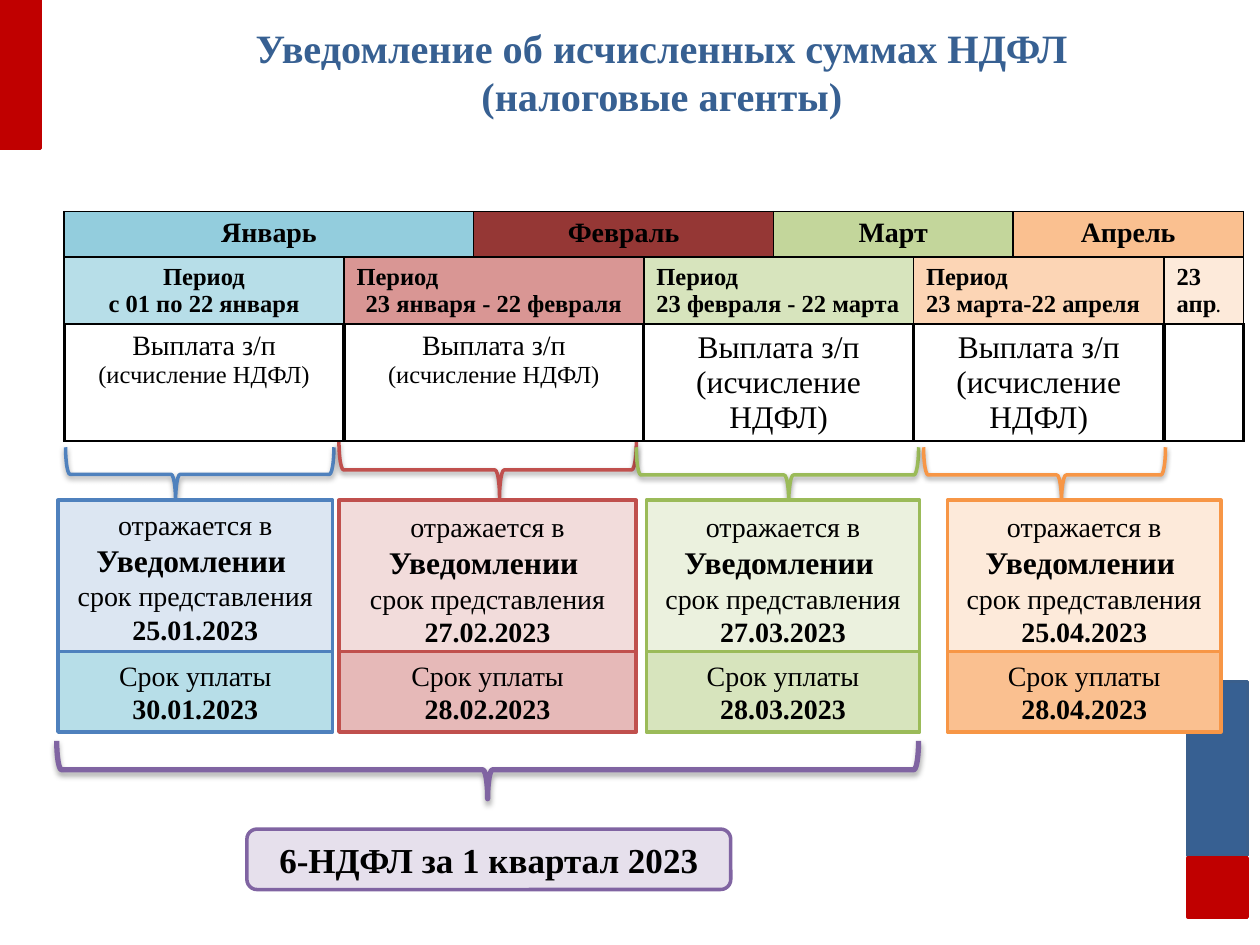
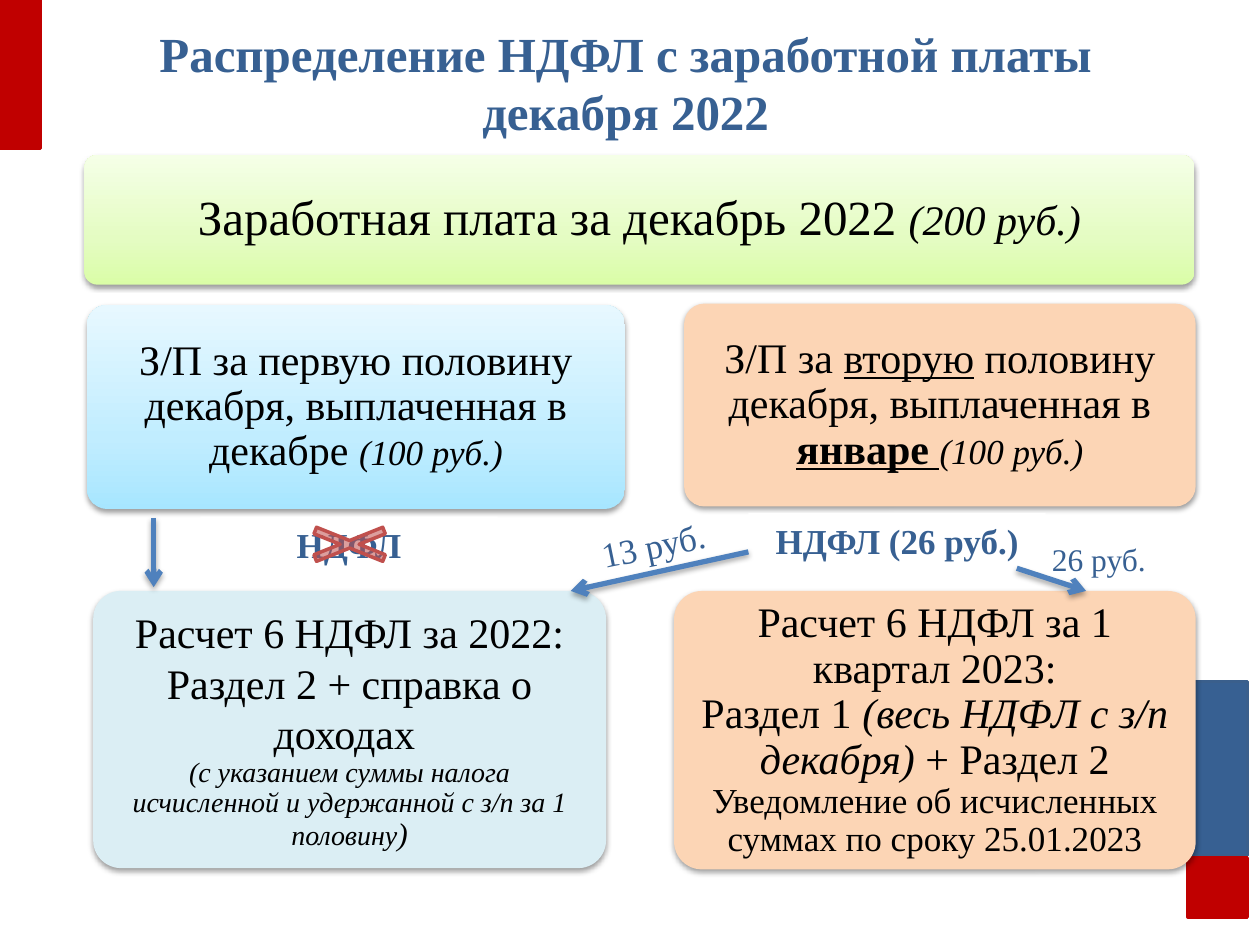
from copy import deepcopy
from dataclasses import dataclass, field

from lxml.etree import SubElement
from pptx import Presentation
from pptx.dml.color import RGBColor
from pptx.enum.shapes import MSO_CONNECTOR as Link, MSO_SHAPE as Preset
from pptx.enum.text import MSO_ANCHOR as Anchor, MSO_AUTO_SIZE as AutoSize, PP_ALIGN as Align
from pptx.oxml.ns import qn
from pptx.util import Emu, Pt

EMU_PER_PX = 9144  # 100 px to the inch
TITLE_ONLY = 5


@dataclass(frozen=True)
class Theme:
    font: str = "Times New Roman"
    ink: str = "000000"
    paper: str = "FFFFFF"
    navy: str = "376092"
    navy_edge: str = "3A5F8C"
    red: str = "C00000"
    blue: str = "4F81BD"
    brick: str = "C0504D"
    green: str = "9BBB59"
    orange: str = "F79646"
    purple: str = "8064A2"
    lilac: str = "E6E0EC"
    peach: str = "FCD5B5"
    ice: str = "DBEEF4"
    lime_fade: tuple = ("DAFDA7", "E4FCC2", "F5FFE7")
    sky_fade: tuple = ("A7E6FF", "C1EDFF", "E7F8FF")
    months: tuple = ("93CDDD", "953735", "C3D69B", "FAC090")
    periods: tuple = ("B7DEE8", "D99694", "D7E4BD", "FCD5B5", "FDEADA")
    dot: int = 9
    small: int = 14
    body: int = 16
    large: int = 18
    label: int = 20
    title: int = 23
    head: int = 24
    banner: int = 28
    soft: tuple = (1.57, 38)    # shadow distance in points, opacity in percent
    strong: tuple = (1.81, 35)


THEME = Theme()


@dataclass
class Span:
    text: str
    size: int = THEME.body
    bold: bool = False
    italic: bool = False
    underline: bool = False
    color: str = THEME.ink


@dataclass
class Para:
    spans: list = field(default_factory=list)
    align: Align = Align.CENTER
    spacing: float = 1.0


def line_of(text, size, align=Align.CENTER, **style):
    """A paragraph with a single span."""
    return Para([Span(text, size, **style)], align)


def px(*lengths):
    return [Emu(length * EMU_PER_PX) for length in lengths]


def rgb(color):
    return RGBColor.from_string(color)


def write(frame, paras):
    frame.word_wrap = True
    for index, item in enumerate(paras):
        para = frame.paragraphs[0] if index == 0 else frame.add_paragraph()
        para.alignment = item.align
        para.line_spacing = item.spacing
        for span in item.spans:
            for number, text in enumerate(span.text.split("\n")):
                if number:
                    para.add_line_break()
                run = para.add_run()
                run.text = text
                font = run.font
                font.name, font.size = THEME.font, Pt(span.size)
                font.bold, font.italic, font.underline = span.bold, span.italic, span.underline
                font.color.rgb = rgb(span.color)


def set_shadow(shape, shadow):
    """Call after fill and line; None leaves an empty effect list."""
    effects = SubElement(shape._element.spPr, qn("a:effectLst"))
    if shadow:
        distance, opacity = shadow
        outer = SubElement(effects, qn("a:outerShdw"), blurRad="40000", dist=str(Pt(distance)),
                           dir="5400000", rotWithShape="0")
        tint = SubElement(outer, qn("a:srgbClr"), val=THEME.ink)
        SubElement(tint, qn("a:alpha"), val=str(opacity * 1000))


def set_fade(shape, colors):
    """Three-colour gradient running upwards."""
    fill = shape.fill
    fill.gradient()
    fill.gradient_angle = 90
    first = shape._element.spPr.find(".//" + qn("a:gs"))
    first.addnext(deepcopy(first))
    for stop, color, position in zip(fill.gradient_stops, colors, (0, 0.35, 1)):
        stop.color.rgb = rgb(color)
        stop.position = position


def add_box(page, preset, place, fill=None, line=None, weight=2, paras=(), adjust=(),
            shadow=None, inset=None, opacity=None):
    shape = page.shapes.add_shape(preset, *px(*place))
    for index, value in enumerate(adjust):
        shape.adjustments[index] = value
    if isinstance(fill, tuple):
        set_fade(shape, fill)
    elif fill:
        shape.fill.solid()
        shape.fill.fore_color.rgb = rgb(fill)
    else:
        shape.fill.background()
    if opacity:
        tint = shape._element.spPr.find(qn("a:solidFill"))[0]
        SubElement(tint, qn("a:alpha"), val=str(opacity * 1000))
    if line:
        shape.line.color.rgb = rgb(line)
        shape.line.width = Pt(weight)
    else:
        shape.line.fill.background()
    set_shadow(shape, shadow)
    frame = shape.text_frame
    if inset is not None:
        set_inset(frame, inset)
    write(frame, paras)
    return shape


def set_inset(frame, inset):
    frame.margin_left = frame.margin_top = frame.margin_right = frame.margin_bottom = px(inset)[0]


def add_brace(page, left, top, width, height, color, tip=0.5, weight=2, shadow=THEME.soft):
    """Downward brace filling the given box; tip is measured from its right end."""
    turn = (width - height) // 2
    brace = add_box(page, Preset.RIGHT_BRACE, (left + turn, top - turn, height, width),
                    line=color, weight=weight, adjust=(0.083, tip), shadow=shadow)
    brace.rotation = 90


def add_arrow(page, *ends):
    arrow = page.shapes.add_connector(Link.STRAIGHT, *px(*ends))
    arrow.line.color.rgb = rgb(THEME.blue)
    arrow.line.width = Pt(3)
    SubElement(arrow._element.spPr.find(qn("a:ln")), qn("a:tailEnd"), type="arrow")
    set_shadow(arrow, THEME.strong)


def add_note(page, place, text, size, rotation=0):
    note = page.shapes.add_textbox(*px(*place))
    note.rotation = rotation
    write(note.text_frame, [line_of(text, size, Align.LEFT, color=THEME.navy)])


def add_page(deck, title, place, size):
    """Page with the shared corner bands and title style."""
    page = deck.slides.add_slide(deck.slide_layouts[TITLE_ONLY])
    for band, fill, edge in (((943, 541, 47, 138), THEME.navy, THEME.navy_edge),
                             ((943, 681, 47, 47), THEME.red, THEME.red),
                             ((0, 0, 32, 118), THEME.red, THEME.red)):
        add_box(page, Preset.RECTANGLE, band, fill, edge)
    holder = page.shapes.title
    holder.left, holder.top, holder.width, holder.height = px(*place)
    frame = holder.text_frame
    frame.auto_size = AutoSize.NONE
    frame.vertical_anchor = Anchor.MIDDLE
    set_inset(frame, 0)
    write(frame, [line_of(title, size, bold=True, color=THEME.navy)])
    return page


def set_borders(cell, side_weight):
    props = cell._tc.get_or_add_tcPr()
    for side, weight in (("L", side_weight), ("R", side_weight), ("T", 1), ("B", 1)):
        edge = SubElement(props, qn("a:ln" + side), w=str(Pt(weight)))
        SubElement(SubElement(edge, qn("a:solidFill")), qn("a:srgbClr"), val=THEME.ink)


def fill_row(table, row, starts, fills, texts):
    """Merge each cell up to the next start, then fill and write it."""
    ends = starts[1:] + [len(table.columns)]
    for start, end, fill, paras in zip(starts, ends, fills, texts):
        cell = table.cell(row, start)
        if end - start > 1:
            cell.merge(table.cell(row, end - 1))
        cell.fill.solid()
        cell.fill.fore_color.rgb = rgb(fill)
        write(cell.text_frame, paras)


def add_calendar(page):
    widths, heights = (222, 103, 135, 103, 111, 79, 120, 63), (36, 53, 93)
    table = page.shapes.add_table(len(heights), len(widths),
                                  *px(51, 168, sum(widths), sum(heights))).table
    table.first_row = table.horz_banding = False
    for column, width in zip(table.columns, px(*widths)):
        column.width = width
    for index, height in enumerate(px(*heights)):
        table.rows[index].height = height
        for cell in table.rows[index].cells:
            set_borders(cell, 2.25 if index == 2 else 1)

    months = [[line_of(name, THEME.body, bold=True)]
              for name in ("Январь", "Февраль", "Март", "Апрель")]
    fill_row(table, 0, [0, 2, 4, 6], THEME.months, months)

    def period(dates, first=Align.LEFT, second=Align.LEFT):
        return [line_of("Период", THEME.small, first, bold=True),
                line_of(dates, THEME.small, second, bold=True)]

    def payment(size, detail_size):
        return [line_of("Выплата з/п", size), line_of("(исчисление НДФЛ)", detail_size)]

    starts = [0, 1, 3, 5, 7]
    fill_row(table, 1, starts, THEME.periods, [
        period("с 01 по 22 января", Align.CENTER, Align.CENTER),
        period("23 января - 22 февраля", second=Align.CENTER),
        period("23 февраля - 22 марта"),
        period("23 марта-22 апреля"),
        [Para([Span("23 апр", THEME.small, bold=True), Span(".", THEME.dot, bold=True)],
              Align.LEFT)]])
    compact, wide = payment(THEME.body, THEME.small), payment(THEME.large, THEME.large)
    fill_row(table, 2, starts, [THEME.paper] * 5, [compact, compact, wide, wide, []])


def add_deadline(page, left, width, height, color, fills, notice, payment):
    """Notice card with its payment card below."""
    add_box(page, Preset.RECTANGLE, (left, 397, width, height), fills[0], color, paras=[
        Para([Span("отражается в "), Span("Уведомлении ", THEME.large, bold=True)]),
        Para([Span("срок представления "), Span(notice, bold=True)])])
    add_box(page, Preset.RECTANGLE, (left, 517, width, 64), fills[1], color, paras=[
        Para([Span("Срок уплаты "), Span(payment, bold=True)])])


def build_notice_page(deck):
    page = add_page(deck, "Уведомление об исчисленных суммах НДФЛ\n(налоговые агенты)",
                    (53, 21, 945, 71), THEME.title)
    add_calendar(page)
    for brace, tip, card, color, fills, notice, payment in (
            ((52, 355, 213, 43), 0.59, (46, 218, 121), THEME.blue, ("DCE6F2", "B7DEE8"),
             "25.01.2023", "30.01.2023"),
            ((269, 351, 236, 44), 0.46, (269, 236, 125), THEME.brick, ("F2DCDB", "E6B9B8"),
             "27.02.2023", "28.02.2023"),
            ((505, 355, 224, 44), 0.46, (513, 217, 125), THEME.green, ("EBF1DE", "D7E4BD"),
             "27.03.2023", "28.03.2023"),
            ((733, 355, 192, 44), 0.43, (752, 217, 125), THEME.orange, ("FDEADA", "FAC090"),
             "25.04.2023", "28.04.2023")):
        add_brace(page, *brace, color, tip)
        add_deadline(page, *card, color, fills, notice, payment)
    add_brace(page, 45, 588, 684, 46, THEME.purple, weight=3, shadow=THEME.strong)
    add_box(page, Preset.ROUNDED_RECTANGLE, (196, 658, 384, 48), THEME.lilac, THEME.purple,
            paras=[line_of("6-НДФЛ за 1 квартал 2023", THEME.label, bold=True)])


def build_split_page(deck):
    page = add_page(deck, "Распределение НДФЛ с заработной платы декабря 2022",
                    (83, 13, 827, 104), THEME.banner)
    head, label = THEME.head, THEME.label
    for place, fill, paras in (
            ((67, 123, 881, 103), THEME.lime_fade, [
                Para([Span("Заработная плата за декабрь 2022 ", THEME.banner),
                      Span("(200 руб.)", head, italic=True)], spacing=0.9)]),
            ((69, 242, 427, 162), THEME.sky_fade, [
                Para([Span("З/П за первую половину декабря, выплаченная в декабре ", head),
                      Span("(100 руб.)", label, italic=True)], spacing=0.9)]),
            ((74, 469, 407, 220), THEME.ice, [
                line_of("Расчет 6 НДФЛ за 2022:", head),
                line_of("Раздел 2 + справка о доходах ", head),
                Para([Span("(с указанием суммы налога исчисленной и удержанной с з/п "
                           "за 1 половину", italic=True),
                      Span(")", THEME.large, italic=True)], spacing=0.9)]),
            ((543, 241, 406, 161), THEME.peach, [
                Para([Span("З/П за ", head), Span("вторую", head, underline=True),
                      Span(" половину декабря, выплаченная в ", head),
                      Span("январе ", head, bold=True, underline=True),
                      Span("(100 руб.)", label, italic=True)], spacing=0.9)]),
            ((535, 469, 414, 221), THEME.peach, [
                Para([Span("Расчет 6 НДФЛ за 1 квартал 2023:", head)], spacing=0.9),
                Para([Span("Раздел 1 ", head),
                      Span("(весь НДФЛ с з/п декабря)", head, italic=True),
                      Span(" + Раздел 2", head)], spacing=0.9),
                Para([Span("Уведомление об исчисленных суммах по сроку 25.01.2023", label)],
                     spacing=0.9)])):
        add_box(page, Preset.ROUNDED_RECTANGLE, place, fill, paras=paras, adjust=(0.1,),
                shadow=THEME.soft, inset=10)
    for left, top, text in ((159, 410, "НДФЛ"), (594, 407, "НДФЛ (26 руб.)")):
        add_box(page, Preset.RECTANGLE, (left, top, 236, 44), THEME.paper,
                paras=[line_of(text, label, bold=True, color=THEME.navy)])
    add_box(page, Preset.MATH_MULTIPLY, (225, 411, 105, 42), THEME.brick, THEME.brick,
            adjust=(0.133,), opacity=55)
    for ends in ((594, 438, 453, 469), (122, 411, 122, 466), (807, 451, 862, 469)):
        add_arrow(page, *ends)
    add_note(page, (467, 410, 110, 44), "13 руб.", label, rotation=348.4)
    add_note(page, (825, 424, 111, 40), "26 руб.", THEME.large)


def main():
    deck = Presentation()
    deck.slide_width, deck.slide_height = px(1000, 750)
    build_notice_page(deck)
    build_split_page(deck)
    deck.save("out.pptx")


if __name__ == "__main__":
    main()
